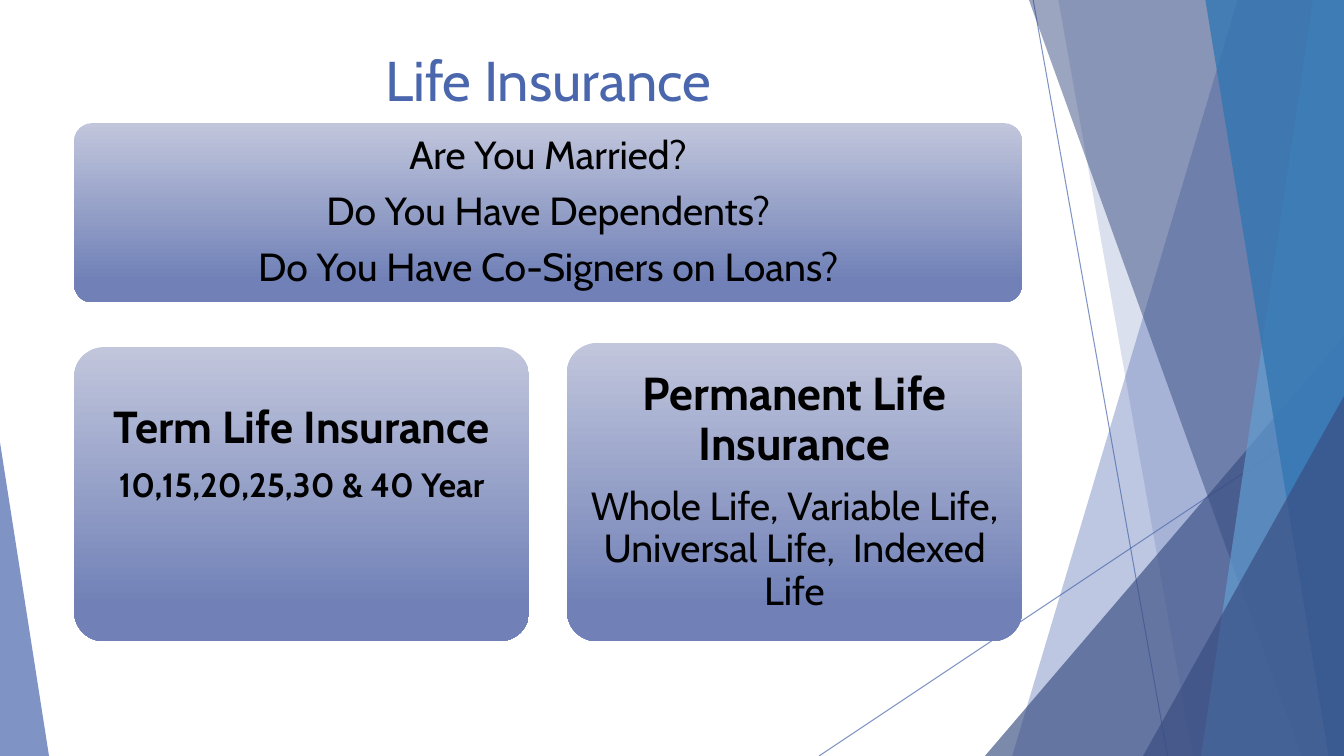
"""Build the Life Insurance slide with its faceted backdrop."""
from lxml.etree import SubElement
from pptx import Presentation
from pptx.dml.color import RGBColor
from pptx.enum.shapes import MSO_CONNECTOR, MSO_SHAPE
from pptx.enum.text import MSO_ANCHOR, PP_ALIGN
from pptx.oxml.ns import qn
from pptx.util import Pt

WIDTH, HEIGHT = 960, 540
FONT = "Cabin"
COLORS = {
    "blue": "4A66AC",
    "navy": "384C81",
    "sky": "629DD1",
    "azure": "3477B2",
    "pale": "C1C6DC",
    "slate": "7181B7",
    "black": "000000",
}


def rgb(name):
    return RGBColor.from_string(COLORS[name])


def fade(part, alpha):
    color = next(part.iter(qn("a:srgbClr")))
    SubElement(color, qn("a:alpha")).set("val", str(alpha * 1000))


def paint(shape, color, alpha):
    shape.shadow.inherit = False
    shape.line.fill.background()
    shape.fill.solid()
    shape.fill.fore_color.rgb = rgb(color)
    fade(shape.fill._xPr, alpha)


def add_ray(slide, start, end):
    ray = slide.shapes.add_connector(
        MSO_CONNECTOR.STRAIGHT, *map(Pt, start + end))
    ray.line.color.rgb = rgb("blue")
    ray.line.width = Pt(0.75)
    props = ray._element.spPr
    fade(props, 70)
    SubElement(props, qn("a:effectLst"))


def add_facet(slide, top, base, color, alpha):
    pen = slide.shapes.build_freeform(Pt(top), 0)
    pen.add_line_segments(
        [(Pt(WIDTH), 0), (Pt(WIDTH), Pt(HEIGHT)), (Pt(base), Pt(HEIGHT))])
    paint(pen.convert_to_shape(), color, alpha)


def add_wedge(slide, left, top, width, tip, color, alpha):
    wedge = slide.shapes.add_shape(
        MSO_SHAPE.ISOSCELES_TRIANGLE,
        Pt(left), Pt(top), Pt(width), Pt(HEIGHT - top))
    wedge.adjustments[0] = tip
    paint(wedge, color, alpha)


def add_run(para, text, size, color, bold=False):
    para.alignment = PP_ALIGN.CENTER
    run = para.add_run()
    run.text = text
    run.font.name = FONT
    run.font.size = Pt(size)
    run.font.bold = bold
    run.font.color.rgb = rgb(color)


def add_card(slide, box, lines, drop=None):
    card = slide.shapes.add_shape(MSO_SHAPE.ROUNDED_RECTANGLE, *map(Pt, box))
    card.adjustments[0] = 0.1
    card.shadow.inherit = False
    card.line.fill.background()
    card.fill.gradient()
    card.fill.gradient_angle = 270
    light, dark = card.fill.gradient_stops
    light.color.rgb, light.position = rgb("pale"), 0
    dark.color.rgb, dark.position = rgb("slate"), 0.88

    frame = card.text_frame
    frame.word_wrap = True
    frame.margin_left = frame.margin_right = Pt(10)
    frame.margin_top = frame.margin_bottom = Pt(9)
    frame.vertical_anchor = MSO_ANCHOR.MIDDLE
    if drop is not None:
        frame.vertical_anchor = MSO_ANCHOR.TOP
        frame.margin_top = Pt(drop)
    for index, (text, size, bold) in enumerate(lines):
        para = frame.add_paragraph() if index else frame.paragraphs[0]
        para.line_spacing = 0.9
        para.space_after = Pt(size * 0.35)
        add_run(para, text, size, "black", bold)


def add_title(slide, text):
    title = slide.shapes.title
    title.left, title.top, title.width, title.height = map(
        Pt, (53, 26, 677, 61))
    title.text_frame.vertical_anchor = MSO_ANCHOR.MIDDLE
    add_run(title.text_frame.paragraphs[0], text, 40, "blue")


def add_scene(slide):
    add_ray(slide, (738, 0), (834, HEIGHT))
    add_ray(slide, (WIDTH, 290), (585, HEIGHT))
    add_facet(slide, 884, 723, "blue", 36)
    add_facet(slide, 756, 852, "blue", 20)
    add_wedge(slide, 703.5, 240, 256.5, 1, "navy", 66)
    add_facet(slide, 735, 929.5, "navy", 50)
    add_facet(slide, 938, 858, "sky", 70)
    add_facet(slide, 861, 949, "azure", 80)
    add_wedge(slide, 816.5, 283, 143.5, 1, "navy", 66)
    add_wedge(slide, 0, 316, 35, 0, "blue", 70)


def main():
    deck = Presentation()
    deck.slide_width, deck.slide_height = Pt(WIDTH), Pt(HEIGHT)
    slide = deck.slides.add_slide(deck.slide_layouts[5])
    add_scene(slide)
    add_title(slide, "Life Insurance")
    add_card(slide, (53, 88, 677, 128), [
        ("Are You Married?", 28, False),
        ("Do You Have Dependents?", 28, False),
        ("Do You Have Co-Signers on Loans?", 28, False),
    ])
    add_card(slide, (53, 248, 325, 210), [
        ("Term Life Insurance", 32, True),
        ("10,15,20,25,30 & 40 Year", 24, True),
    ], drop=35)
    add_card(slide, (405, 245, 325, 213), [
        ("Permanent Life Insurance", 33, True),
        ("Whole Life, Variable Life, Universal Life,  Indexed Life", 28, False),
    ])
    deck.save("out.pptx")


if __name__ == "__main__":
    main()
